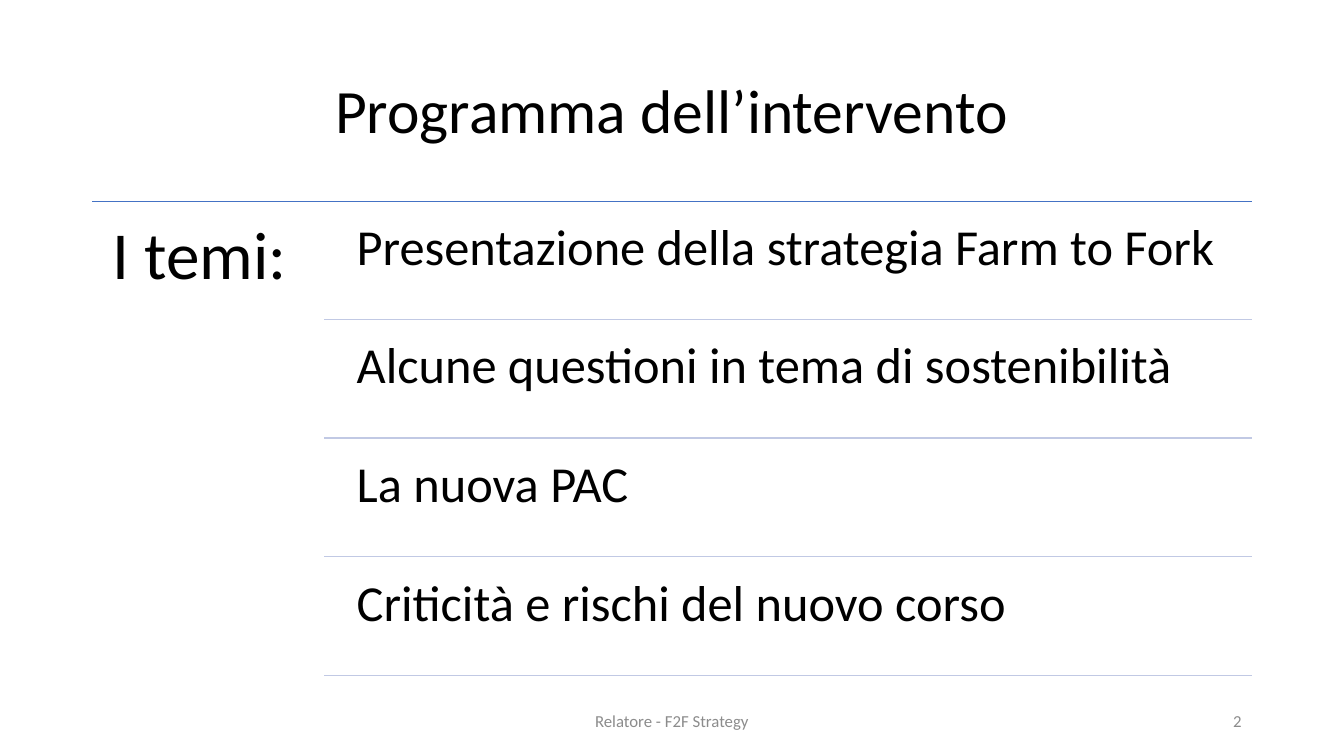
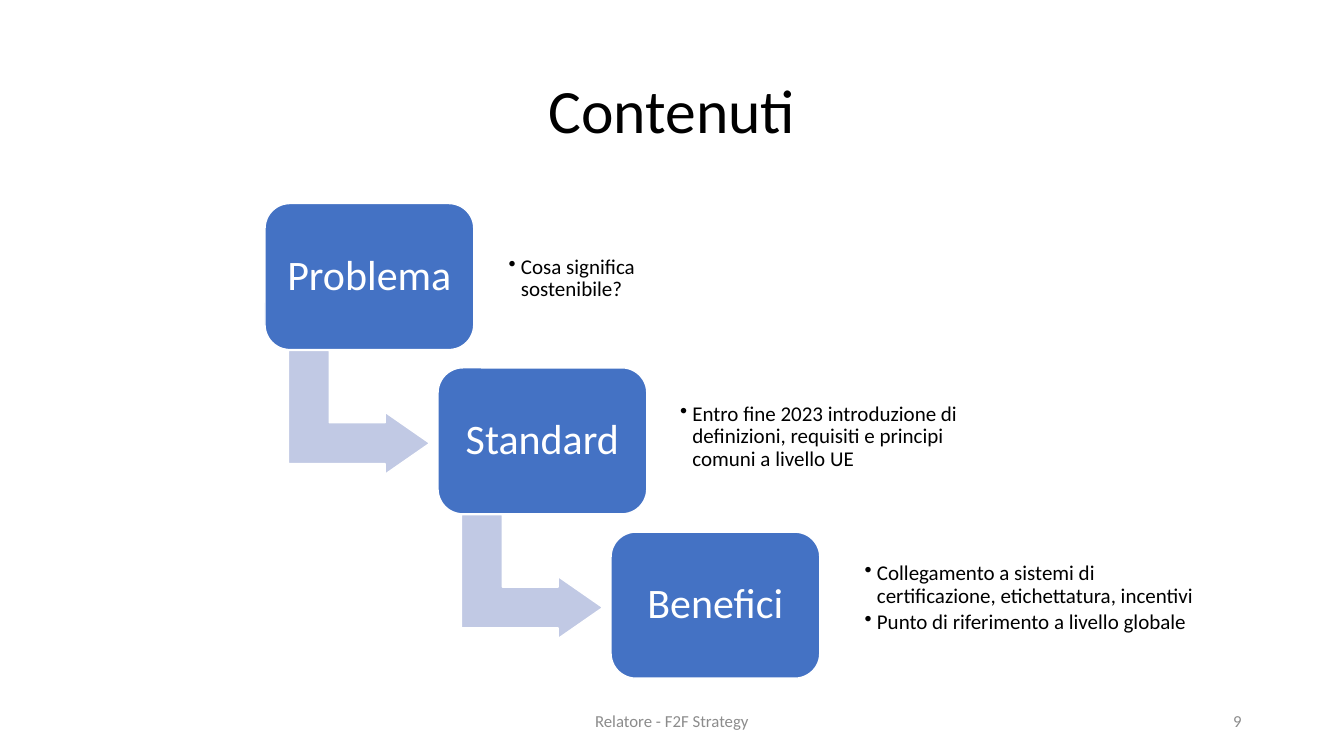
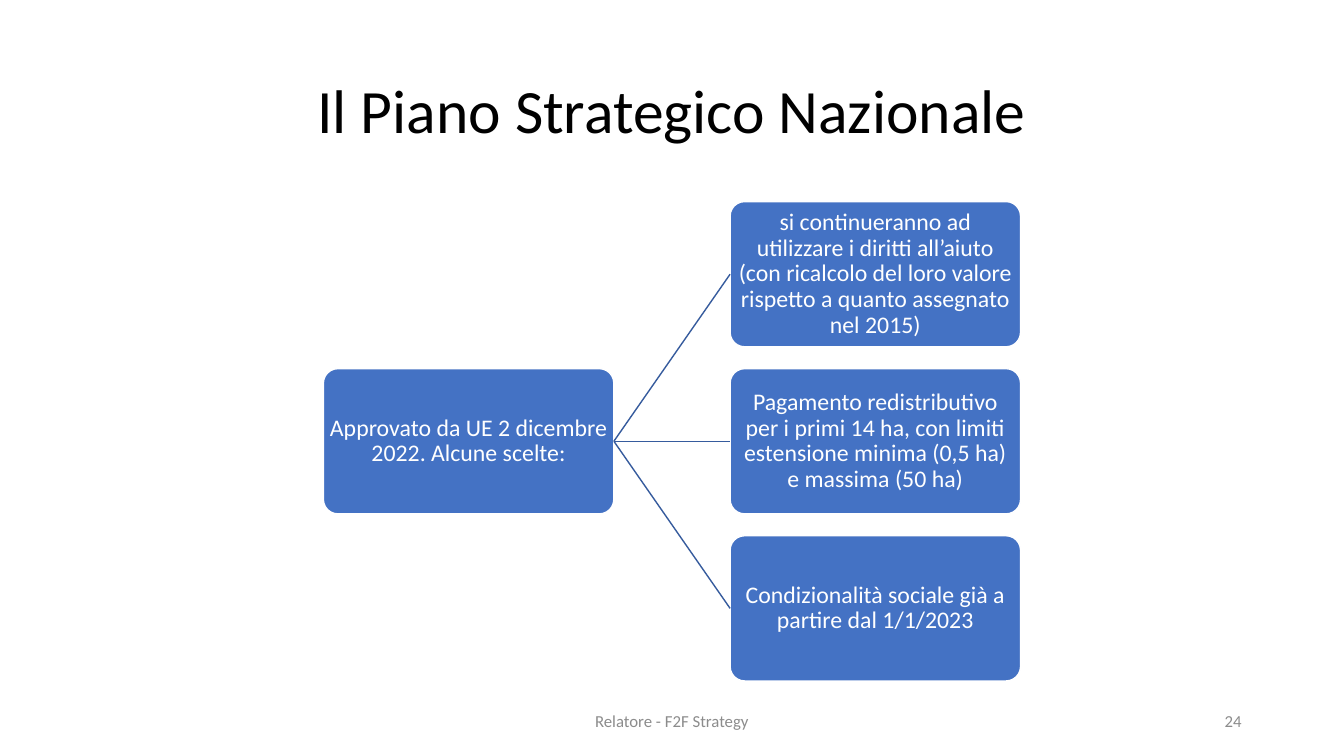
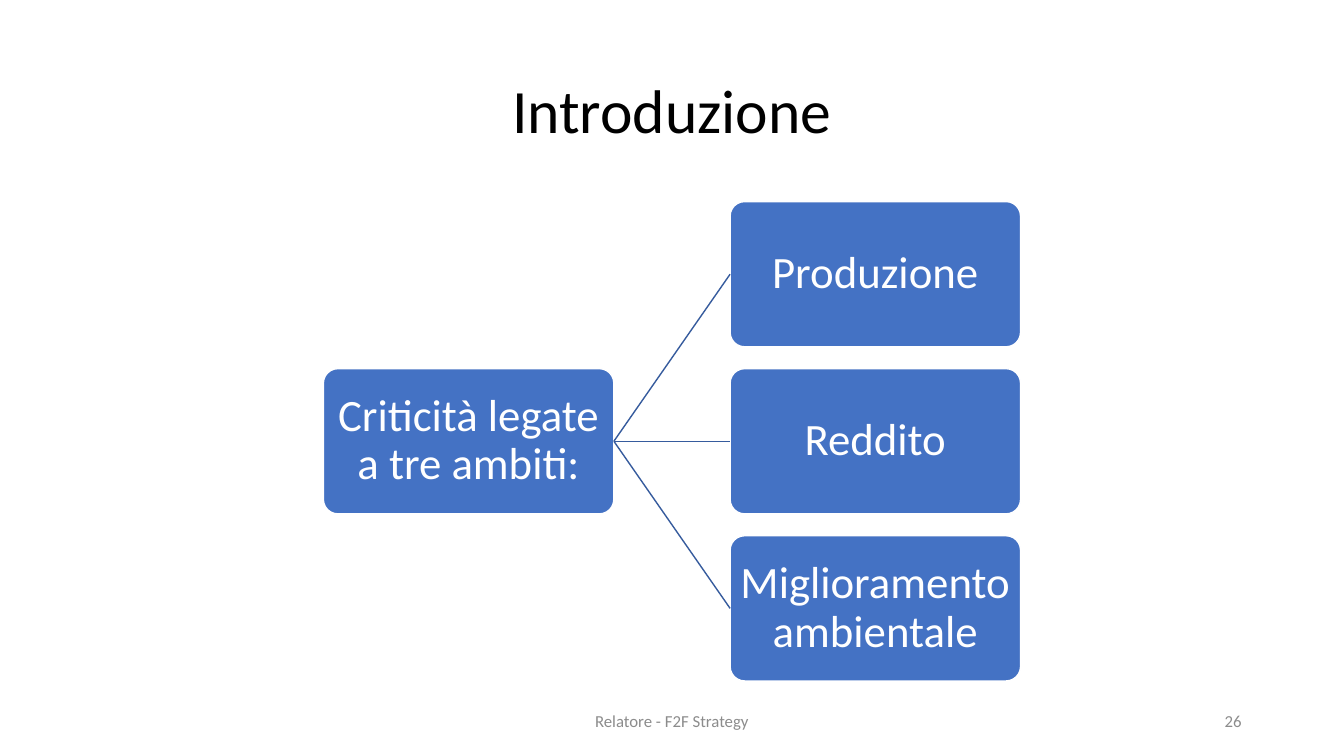
from pptx import Presentation
from pptx import util as u
from pptx.dml.color import RGBColor
from pptx.enum import shapes, text
from pptx.oxml.ns import qn
from lxml import etree

BLACK = RGBColor(0x00, 0x00, 0x00)
WHITE = RGBColor(0xFF, 0xFF, 0xFF)
GREY = RGBColor(0x8C, 0x8C, 0x8C)
BLUE = RGBColor(0x44, 0x72, 0xC4)
PALE = RGBColor(0xC1, 0xC9, 0xE4)
DARK = RGBColor(0x36, 0x5B, 0x9D)
FONT = "Calibri"
FOOT = "Relatore - F2F Strategy"
LEFT, RIGHT = 2.33, 31.54
MIDDLE, TOP = text.MSO_ANCHOR.MIDDLE, text.MSO_ANCHOR.TOP
ALIGN = text.PP_ALIGN
KIND = shapes.MSO_SHAPE


def cm(*sizes):
    return [u.Cm(size) for size in sizes]


def write(frame, words, size=12, color=BLACK, align=ALIGN.LEFT,
          anchor=MIDDLE, inset=None, spacing=0.9, bullet=False):
    frame.word_wrap = True
    frame.vertical_anchor = anchor
    if inset is not None:
        frame.margin_left = frame.margin_right = u.Cm(inset)
        frame.margin_top = frame.margin_bottom = u.Cm(inset)
    frame.text = words
    for para in frame.paragraphs:
        para.alignment = align
        para.line_spacing = spacing
        font = para.runs[0].font
        font.name, font.size, font.color.rgb = FONT, u.Pt(size), color
        if bullet:
            para.space_after = u.Pt(2)
            props = para._p.get_or_add_pPr()
            props.set("marL", str(u.Cm(0.31)))
            props.set("indent", str(-u.Cm(0.31)))
            etree.SubElement(props, qn("a:buChar"), char="•")


class Deck:
    def __init__(self):
        self.file = Presentation()
        self.file.slide_width, self.file.slide_height = cm(33.87, 19.05)

    def page(self, title, number):
        self.slide = self.file.slides.add_slide(self.file.slide_layouts[5])
        self.items = self.slide.shapes
        head = self.items.title
        head.left, head.top, head.width, head.height = cm(LEFT, 1.01, 29.21, 3.68)
        write(head.text_frame, title, size=44, align=ALIGN.CENTER)
        self.label(FOOT, 11.22, 17.66, 11.43, 1.01,
                   color=GREY, align=ALIGN.CENTER, spacing=1)
        self.label(str(number), 23.92, 17.66, 7.62, 1.01,
                   color=GREY, align=ALIGN.RIGHT, spacing=1)

    def label(self, words, x, y, w, h, **style):
        box = self.items.add_textbox(*cm(x, y, w, h))
        write(box.text_frame, words, **style)

    def shape(self, kind, x, y, w, h, fill, *adjust):
        item = self.items.add_shape(kind, *cm(x, y, w, h))
        item.shadow.inherit = False
        item.fill.solid()
        item.fill.fore_color.rgb = fill
        item.line.color.rgb = WHITE
        item.line.width = u.Pt(1)
        for i, value in enumerate(adjust):
            item.adjustments[i] = value
        return item

    def box(self, words, x, y, w, h, size, inset, curve):
        item = self.shape(KIND.ROUNDED_RECTANGLE, x, y, w, h, BLUE, curve)
        write(item.text_frame, words, size=size, color=WHITE,
              align=ALIGN.CENTER, inset=inset)
        return item

    def bend(self, x, y):
        arrow = self.shape(KIND.BENT_UP_ARROW, x, y, 3.12, 3.56, PALE,
                           0.33, 0.25, 0.36)
        arrow.rotation = 90

    def line(self, color, x1=0, y1=0, x2=0, y2=0):
        line = self.items.add_connector(shapes.MSO_CONNECTOR.STRAIGHT,
                                        *cm(x1, y1, x2, y2))
        line.line.color.rgb = color
        line.line.width = u.Pt(1)
        etree.SubElement(line._element.spPr, qn("a:effectLst"))
        return line

    def agenda(self, head, topics):
        self.line(BLUE, LEFT, 5.07, RIGHT, 5.07)
        self.label(head, LEFT, 5.07, 5.84, 12.08, size=48, anchor=TOP, inset=0.5)
        for i, topic in enumerate(topics):
            y = 5.21 + 2.99 * i
            self.label(topic, 8.61, y, 22.93, 2.84, size=36, anchor=TOP, inset=0.38)
            self.line(PALE, 8.17, y + 2.84, RIGHT, y + 2.84)

    def steps(self, steps):
        for i, (name, note, x, y, w, inset) in enumerate(steps):
            right, down = 4.36 * i, 4.14 * i
            if i < len(steps) - 1:
                self.bend(7.49 + right, 8.61 + down)
            self.box(name, 6.68 + right, 5.13 + down, 5.26, 3.68, 30, 0.3, 0.17)
            self.label(note, x, y, w, 2.97, size=15, inset=inset, bullet=True)

    def tree(self, root, leaves, size, inset):
        w, h, top, step = 7.32, 3.66, 5.08, 4.21
        base = self.box(root, 8.15, top + step, w, h, size, inset, 0.1)
        for i, words in enumerate(leaves):
            leaf = self.box(words, 18.4, top + step * i, w, h, size, inset, 0.1)
            link = self.line(DARK)
            link.begin_connect(base, 3)
            link.end_connect(leaf, 1)


def main():
    deck = Deck()

    deck.page("Programma dell’intervento", 2)
    deck.agenda("I temi:", [
        "Presentazione della strategia Farm to Fork",
        "Alcune questioni in tema di sostenibilità",
        "La nuova PAC",
        "Criticità e rischi del nuovo corso",
    ])

    deck.page("Contenuti", 9)
    deck.steps([
        ("Problema", "Cosa significa sostenibile?", 12.67, 5.54, 3.84, 0.15),
        ("Standard", "Entro fine 2023 introduzione di definizioni, requisiti "
         "e principi comuni a livello UE", 16.99, 9.53, 8.48, 0.15),
        ("Benefici", "Collegamento a sistemi di certificazione, etichettatura, "
         "incentivi\nPunto di riferimento a livello globale",
         21.59, 13.59, 9.27, 0.2),
    ])

    deck.page("Il Piano Strategico Nazionale", 24)
    deck.tree("Approvato da UE 2 dicembre 2022. Alcune scelte:", [
        "si continueranno ad utilizzare i diritti all’aiuto (con ricalcolo "
        "del loro valore rispetto a quanto assegnato nel 2015)",
        "Pagamento redistributivo per i primi 14 ha, con limiti estensione "
        "minima (0,5 ha) e massima (50 ha)",
        "Condizionalità sociale già a partire dal 1/1/2023",
    ], size=17, inset=0.03)

    deck.page("Introduzione", 26)
    deck.tree("Criticità legate a tre ambiti:",
              ["Produzione", "Reddito", "Miglioramento ambientale"],
              size=32, inset=0.05)

    deck.file.save("out.pptx")


if __name__ == "__main__":
    main()
